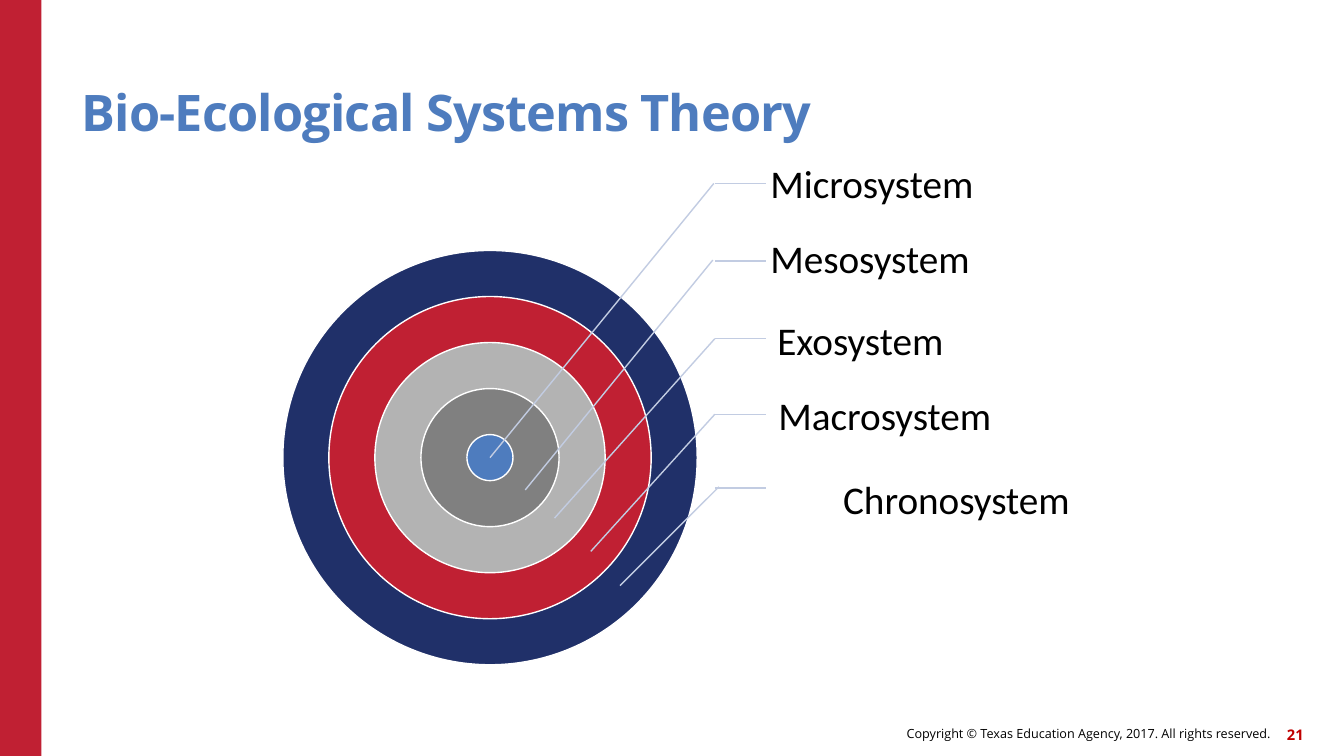
from lxml.etree import SubElement
from pptx import Presentation
from pptx.dml.color import RGBColor
from pptx.enum.shapes import MSO_CONNECTOR, MSO_SHAPE
from pptx.enum.text import MSO_ANCHOR, MSO_AUTO_SIZE, PP_ALIGN
from pptx.oxml.ns import qn
from pptx.util import Inches, Pt

WIDTH, HEIGHT = 13.33, 7.5
TITLE = "Bio-Ecological Systems Theory"
COPYRIGHT = "Copyright © Texas Education Agency, 2017. All rights reserved."
PAGE_NUMBER = "21"
RED, WHITE, LEADER_COLOR = "C02033", "FFFFFF", "C2CCE2"

RING_COLORS = ["203069", RED, "B3B3B3", "808080", "4E7CBE"]
CENTER_X, CENTER_Y, OUTER_DIAMETER = 4.86, 4.54, 4.11

LABEL_HEIGHT, LABEL_INSETS = 0.73, (0.22, 0.04, 0.04, 0.04)
LEADER_LEFT, LEADER_RIGHT = 7.09, 7.6
SYSTEMS = [
    ("Microsystem", (7.42, 1.48, 3.48), PP_ALIGN.LEFT, 1.82, (7.08, 1.82), (4.86, 4.54)),
    ("Mesosystem", (7.42, 2.22, 3.05), PP_ALIGN.LEFT, 2.59, (7.07, 2.58), (5.21, 4.86)),
    ("Exosystem", (7.49, 3.04, 2.64), PP_ALIGN.LEFT, 3.36, (7.09, 3.36), (5.5, 5.14)),
    ("Macrosystem", (7.5, 3.78, 3.31), PP_ALIGN.LEFT, 4.11, (7.09, 4.11), (5.86, 5.47)),
    ("Chronosystem", (6.85, 4.61, 3.8), PP_ALIGN.RIGHT, 4.84, (7.13, 4.83), (6.15, 5.81)),
]


def color(value):
    return RGBColor.from_string(value)


def write_text(shape, text, size, font="Open Sans", fill="000000", bold=False,
               align=PP_ALIGN.LEFT, anchor=MSO_ANCHOR.MIDDLE,
               insets=(0, 0, 0, 0), line_spacing=None, tracking=None):
    frame = shape.text_frame
    frame.word_wrap = True
    frame.auto_size = MSO_AUTO_SIZE.NONE
    frame.vertical_anchor = anchor
    (frame.margin_left, frame.margin_top,
     frame.margin_right, frame.margin_bottom) = map(Inches, insets)
    paragraph = frame.paragraphs[0]
    paragraph.alignment = align
    paragraph.line_spacing = line_spacing
    run = paragraph.add_run()
    run.text = text
    run.font.name = font
    run.font.size = Pt(size)
    run.font.bold = bold
    run.font.color.rgb = color(fill)
    if tracking is not None:
        run._r.get_or_add_rPr().set("spc", str(round(tracking * 100)))


def add_text(slide, box, text, **text_format):
    write_text(slide.shapes.add_textbox(*map(Inches, box)), text, **text_format)


def add_filled_shape(slide, kind, box, fill, outline=None):
    shape = slide.shapes.add_shape(kind, *map(Inches, box))
    shape.shadow.inherit = False
    shape.fill.solid()
    shape.fill.fore_color.rgb = color(fill)
    if outline:
        shape.line.color.rgb = color(outline)
        shape.line.width = Pt(1)
    else:
        shape.line.fill.background()


def add_leader(slide, start, end):
    connector = slide.shapes.add_connector(
        MSO_CONNECTOR.STRAIGHT, *map(Inches, start + end))
    connector.line.color.rgb = color(LEADER_COLOR)
    connector.line.width = Pt(1)
    SubElement(connector._element.spPr, qn("a:effectLst"))


def add_rings(slide):
    count = len(RING_COLORS)
    for index, fill in enumerate(RING_COLORS):
        diameter = OUTER_DIAMETER * (2 * (count - index) - 1) / (2 * count - 1)
        box = (CENTER_X - diameter / 2, CENTER_Y - diameter / 2, diameter, diameter)
        add_filled_shape(slide, MSO_SHAPE.OVAL, box, fill, outline=WHITE)


def add_labels(slide):
    for name, box, align, level, bend, target in SYSTEMS:
        add_text(slide, box + (LABEL_HEIGHT,), name, size=28, font="Calibri",
                 align=align, insets=LABEL_INSETS, line_spacing=0.9)
        add_leader(slide, (LEADER_LEFT, level), (LEADER_RIGHT, level))
        add_leader(slide, bend, target)


def main():
    presentation = Presentation()
    presentation.slide_width = Inches(WIDTH)
    presentation.slide_height = Inches(HEIGHT)
    slide = presentation.slides.add_slide(presentation.slide_layouts[5])

    add_filled_shape(slide, MSO_SHAPE.RECTANGLE, (0, 0, 0.41, HEIGHT), RED)
    add_text(slide, (6.14, 7.12, 6.46, 0.32), COPYRIGHT, size=9, align=PP_ALIGN.RIGHT)
    add_text(slide, (12.51, 7.13, 0.42, 0.32), PAGE_NUMBER, size=10.5,
             fill="C00000", bold=True, align=PP_ALIGN.RIGHT)

    title = slide.shapes.title
    title.left, title.top, title.width, title.height = map(Inches, (0.81, 0.45, 11, 0.96))
    write_text(title, TITLE, size=36, fill="4E7CBE", bold=True,
               anchor=MSO_ANCHOR.BOTTOM, line_spacing=0.9, tracking=-0.6)

    add_rings(slide)
    add_labels(slide)
    presentation.save("out.pptx")


if __name__ == "__main__":
    main()
